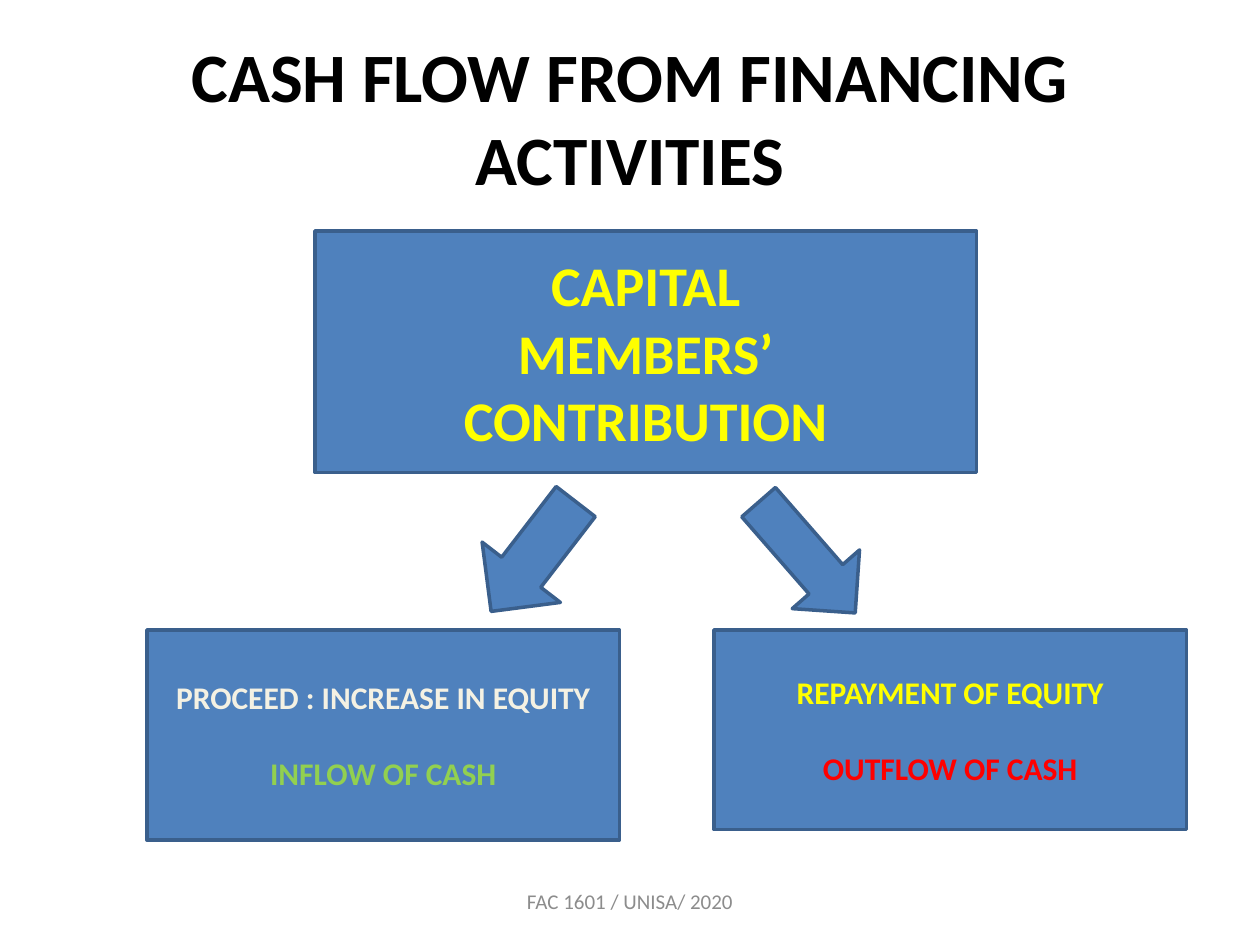
import pptx
import pptx.util
import pptx.dml.color
import pptx.enum.shapes
import pptx.enum.text

RGBColor = pptx.dml.color.RGBColor
BLACK = RGBColor(0x00, 0x00, 0x00)
BLUE = RGBColor(0x4F, 0x81, 0xBD)
DARK_BLUE = RGBColor(0x3A, 0x5F, 0x8C)
YELLOW = RGBColor(0xFF, 0xFF, 0x00)
CREAM = RGBColor(0xF4, 0xF1, 0xE3)
GREEN = RGBColor(0x92, 0xD0, 0x50)
RED = RGBColor(0xFF, 0x00, 0x00)
GRAY = RGBColor(0x8C, 0x8C, 0x8C)

WIDTH, HEIGHT = pptx.util.Inches(10), pptx.util.Inches(7.5)
COLUMN, ROW = WIDTH / 12, HEIGHT / 9


def grid_box(left, top, width, height):
    """Turn columns and rows of the 12 by 9 grid into slide lengths."""
    return round(left * COLUMN), round(top * ROW), round(width * COLUMN), round(height * ROW)


def write_lines(shape, lines, size, bold=True, gap=0):
    """Write centred (text, colour) lines in a shape, one paragraph each."""
    frame = shape.text_frame
    frame.word_wrap = True
    frame.auto_size = pptx.enum.text.MSO_AUTO_SIZE.NONE
    frame.vertical_anchor = pptx.enum.text.MSO_ANCHOR.MIDDLE
    frame.text = "\n".join(text for text, _ in lines)
    for index, (paragraph, (_, color)) in enumerate(zip(frame.paragraphs, lines)):
        paragraph.alignment = pptx.enum.text.PP_ALIGN.CENTER
        if index:
            paragraph.space_before = pptx.util.Pt(gap)
        for run in paragraph.runs:
            run.font.name = "Calibri"
            run.font.size = pptx.util.Pt(size)
            run.font.bold = bold
            run.font.color.rgb = color


def add_blue_shape(slide, kind, box):
    """Add a blue preset shape with a dark blue outline."""
    shape = slide.shapes.add_shape(kind, *box)
    shape.shadow.inherit = False
    shape.fill.solid()
    shape.fill.fore_color.rgb = BLUE
    shape.line.color.rgb = DARK_BLUE
    shape.line.width = pptx.util.Pt(2)
    return shape


def add_title(slide, box):
    """Place the slide title."""
    title = slide.shapes.title
    title.left, title.top, title.width, title.height = box
    write_lines(title, [("CASH FLOW FROM FINANCING ACTIVITIES", BLACK)], 39.6)


def add_card(slide, box, lines, size, gap=0):
    """Add a rectangle holding a few lines of text."""
    card = add_blue_shape(slide, pptx.enum.shapes.MSO_SHAPE.RECTANGLE, box)
    write_lines(card, lines, size, gap=gap)
    return card


def add_arrow(slide, box, rotation):
    """Add a block arrow turned towards a lower card."""
    arrow = add_blue_shape(slide, pptx.enum.shapes.MSO_SHAPE.DOWN_ARROW, box)
    arrow.rotation = rotation


def add_footer(slide, box):
    """Add the course line at the bottom."""
    footer = slide.shapes.add_textbox(*box)
    write_lines(footer, [("FAC 1601 / UNISA/ 2020", GRAY)], 12, bold=False)


def main():
    """Build and save the financing activities slide."""
    presentation = pptx.Presentation()
    presentation.slide_width, presentation.slide_height = WIDTH, HEIGHT
    slide = presentation.slides.add_slide(presentation.slide_layouts[5])

    add_title(slide, grid_box(0.6, 0.36, 10.8, 1.5))
    capital = add_card(slide, grid_box(3, 2.2, 6.3, 2.3),
                       [("CAPITAL", YELLOW), ("MEMBERS’ CONTRIBUTION", YELLOW)], 32)
    capital.text_frame.margin_left = capital.text_frame.margin_right = pptx.util.Inches(0.3)
    add_card(slide, grid_box(1.4, 6, 4.5, 2),
             [("PROCEED : INCREASE IN EQUITY", CREAM), ("INFLOW OF CASH", GREEN)], 18, gap=22)
    add_card(slide, grid_box(6.8, 6, 4.5, 1.9),
             [("REPAYMENT OF EQUITY", YELLOW), ("OUTFLOW OF CASH", RED)], 18, gap=22)
    add_arrow(slide, grid_box(4.61, 4.64, 0.94, 1.32), 37.6)
    add_arrow(slide, grid_box(7.26, 4.61, 0.85, 1.4), 318.9)
    add_footer(slide, grid_box(4.1, 8.34, 3.8, 0.48))

    presentation.save("out.pptx")


if __name__ == "__main__":
    main()
